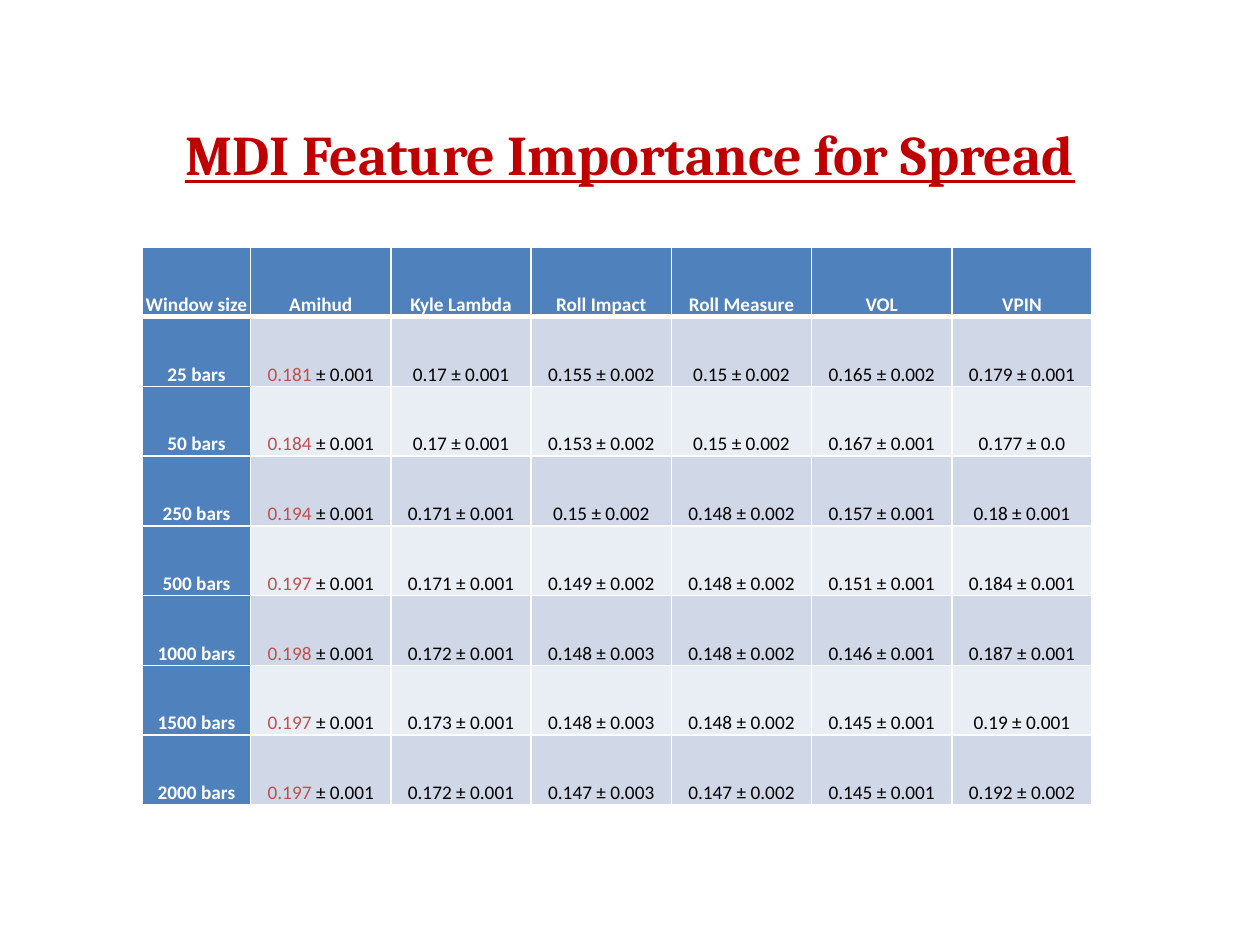
from dataclasses import dataclass

from lxml.etree import SubElement
from pptx import Presentation
from pptx.dml.color import RGBColor
from pptx.enum.text import MSO_ANCHOR, PP_ALIGN
from pptx.oxml.ns import qn
from pptx.util import Inches, Pt

# Content
TITLE = "MDI Feature Importance for Spread"
HEADER = ["Window size", "Amihud", "Kyle Lambda", "Roll Impact",
          "Roll Measure", "VOL", "VPIN"]
ROWS = [
    ["25 bars", "0.181 ± 0.001", "0.17 ± 0.001", "0.155 ± 0.002",
     "0.15 ± 0.002", "0.165 ± 0.002", "0.179 ± 0.001"],
    ["50 bars", "0.184 ± 0.001", "0.17 ± 0.001", "0.153 ± 0.002",
     "0.15 ± 0.002", "0.167 ± 0.001", "0.177 ± 0.0"],
    ["250 bars", "0.194 ± 0.001", "0.171 ± 0.001", "0.15 ± 0.002",
     "0.148 ± 0.002", "0.157 ± 0.001", "0.18 ± 0.001"],
    ["500 bars", "0.197 ± 0.001", "0.171 ± 0.001", "0.149 ± 0.002",
     "0.148 ± 0.002", "0.151 ± 0.001", "0.184 ± 0.001"],
    ["1000 bars", "0.198 ± 0.001", "0.172 ± 0.001", "0.148 ± 0.003",
     "0.148 ± 0.002", "0.146 ± 0.001", "0.187 ± 0.001"],
    ["1500 bars", "0.197 ± 0.001", "0.173 ± 0.001", "0.148 ± 0.003",
     "0.148 ± 0.002", "0.145 ± 0.001", "0.19 ± 0.001"],
    ["2000 bars", "0.197 ± 0.001", "0.172 ± 0.001", "0.147 ± 0.003",
     "0.147 ± 0.002", "0.145 ± 0.001", "0.192 ± 0.002"],
]
TOP_FEATURE = HEADER.index("Amihud")


@dataclass(frozen=True)
class Theme:
    title_font: str = "Cambria"
    body_font: str = "Calibri"
    title_size: int = 32
    body_size: int = 11
    title: str = "C00000"
    head_fill: str = "4F81BD"
    head_text: str = "FFFFFF"
    text: str = "000000"
    accent: str = "C0504D"
    border: str = "FFFFFF"
    bands: tuple = ("D0D8E8", "E9EDF4")


THEME = Theme()


def style_font(font, name, size, color, bold):
    font.name, font.size, font.bold = name, Pt(size), bold
    font.color.rgb = RGBColor.from_string(color)


def add_title(s):
    title = s.shapes.title
    title.left, title.top = Inches(0.5), Inches(0.87)
    title.width, title.height = Inches(9), Inches(0.69)
    tf = title.text_frame
    tf.text = TITLE
    tf.vertical_anchor = MSO_ANCHOR.MIDDLE
    p = tf.paragraphs[0]
    p.alignment = PP_ALIGN.CENTER
    style_font(p.font, THEME.title_font, THEME.title_size, THEME.title, True)
    p.font.underline = True


def add_borders(cell, row):
    # Thin lines all round, with a thick rule under the header
    widths = {"a:lnL": 1, "a:lnR": 1,
              "a:lnT": 3 if row == 1 else 1,
              "a:lnB": 3 if row == 0 else 1}
    tc_pr = cell._tc.get_or_add_tcPr()
    for tag, width in widths.items():
        ln = SubElement(tc_pr, qn(tag), w=str(Pt(width)))
        fill = SubElement(ln, qn("a:solidFill"))
        SubElement(fill, qn("a:srgbClr"), val=THEME.border)


def fill_cell(cell, text, row, col):
    is_head = row == 0 or col == 0
    fill = THEME.head_fill if is_head else THEME.bands[(row - 1) % 2]
    add_borders(cell, row)
    cell.fill.solid()
    cell.fill.fore_color.rgb = RGBColor.from_string(fill)
    cell.vertical_anchor = MSO_ANCHOR.BOTTOM
    cell.margin_left = cell.margin_right = cell.margin_top = Inches(0.01)
    cell.margin_bottom = 0

    p = cell.text_frame.paragraphs[0]
    p.alignment = PP_ALIGN.CENTER
    p.line_spacing, p.space_after = 1.07, Pt(8)
    style_font(p.font, THEME.body_font, THEME.body_size,
               THEME.head_text if is_head else THEME.text, is_head)

    # The mean of the most important feature stands out
    if col == TOP_FEATURE and not is_head:
        mean, sign, error = text.partition(" ± ")
        r = p.add_run()
        r.text = mean
        r.font.color.rgb = RGBColor.from_string(THEME.accent)
        text = sign + error
    p.add_run().text = text


def add_importance_table(s):
    data = [HEADER] + ROWS
    width, height, first_width = Inches(7.54), Inches(4.43), Inches(0.86)
    table = s.shapes.add_table(len(data), len(HEADER), Inches(1.13),
                               Inches(1.96), width, height).table
    table.first_col = True
    for j, column in enumerate(table.columns):
        column.width = (width - first_width) // (len(HEADER) - 1) if j else first_width
    for i, values in enumerate(data):
        table.rows[i].height = height // len(data)
        for j, text in enumerate(values):
            fill_cell(table.cell(i, j), text, i, j)


def main():
    prs = Presentation()
    prs.slide_width, prs.slide_height = Inches(10), Inches(7.5)
    s = prs.slides.add_slide(prs.slide_layouts[5])
    add_title(s)
    add_importance_table(s)
    prs.save("out.pptx")


if __name__ == "__main__":
    main()
